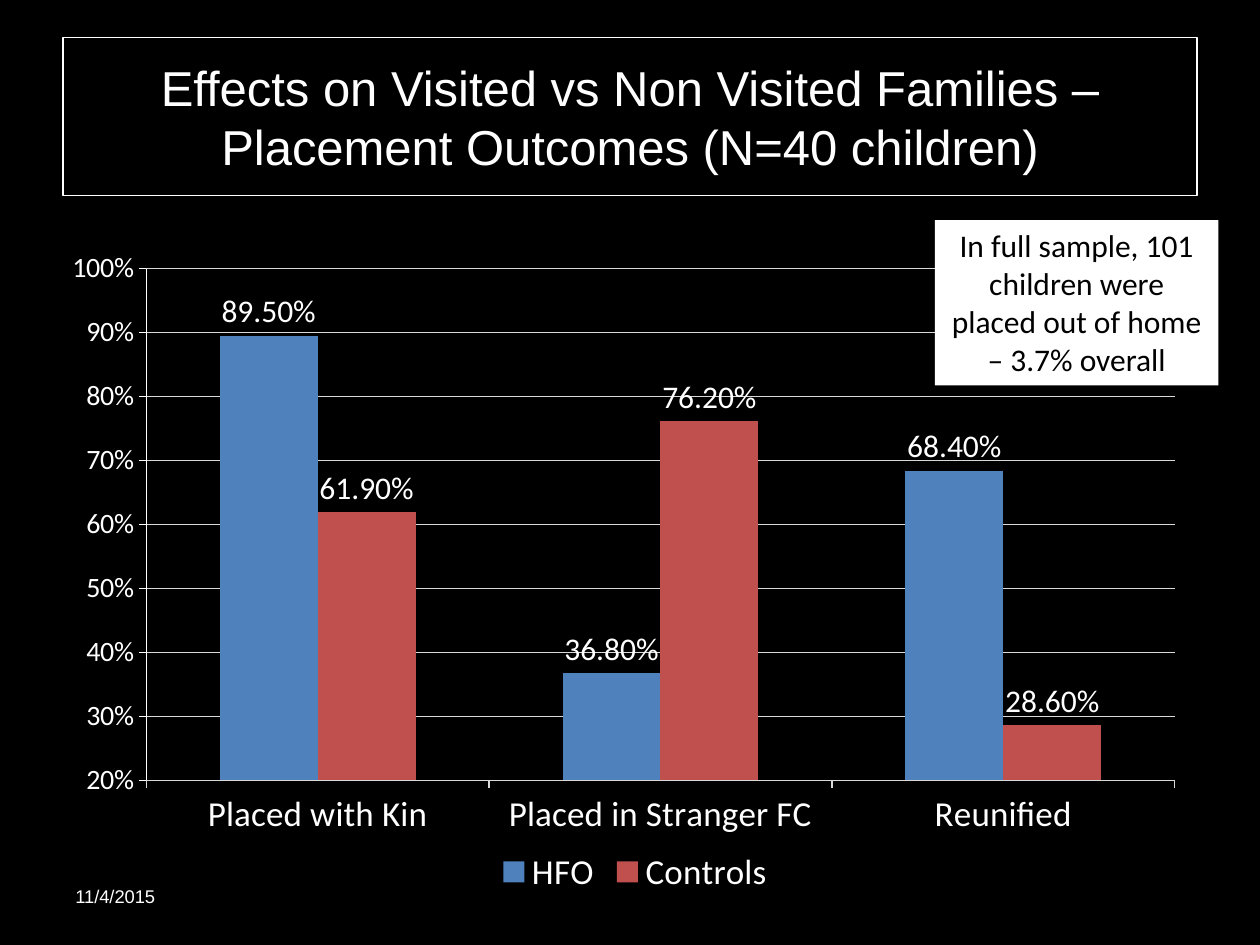
from lxml import etree
from pptx import Presentation
from pptx.chart.data import CategoryChartData
from pptx.dml.color import RGBColor
from pptx.enum.chart import XL_CHART_TYPE, XL_LABEL_POSITION, XL_LEGEND_POSITION, XL_TICK_MARK
from pptx.enum.shapes import MSO_SHAPE
from pptx.enum.text import MSO_ANCHOR, PP_ALIGN
from pptx.oxml.ns import qn
from pptx.util import Inches, Pt

COLUMN = XL_CHART_TYPE.COLUMN_CLUSTERED
BOTTOM = XL_LEGEND_POSITION.BOTTOM
OUTSIDE_END = XL_LABEL_POSITION.OUTSIDE_END
TICK_OUT, TICK_NONE = XL_TICK_MARK.OUTSIDE, XL_TICK_MARK.NONE
RECT = MSO_SHAPE.RECTANGLE
TOP, MIDDLE = MSO_ANCHOR.TOP, MSO_ANCHOR.MIDDLE
LEFT, CENTER = PP_ALIGN.LEFT, PP_ALIGN.CENTER

COLORS = {"back": "000000", "light": "FFFFFF", "grid": "D9D9D9",
          "HFO": "4F81BD", "Controls": "C0504D"}
CATEGORIES = ["Placed with Kin", "Placed in Stranger FC", "Reunified"]
OUTCOMES = {"HFO": (0.895, 0.368, 0.684), "Controls": (0.619, 0.762, 0.286)}
PLOT = {"x": 0.069, "y": 0.084, "w": 0.907, "h": 0.742}
WIDTH, HEIGHT = 10, 7.5


def rgb(name):
    return RGBColor.from_string(COLORS[name])


def place(x, y, w, h):
    return [Inches(v) for v in (x * WIDTH, y * HEIGHT, w * WIDTH, h * HEIGHT)]


def style(font, size, color="light", name="Calibri"):
    font.size, font.name, font.bold = Pt(size), name, False
    font.color.rgb = rgb(color)


def rule(line, color):
    line.color.rgb, line.width = rgb(color), Pt(0.75)


def write(s, text, size, color, name, align=CENTER, anchor=MIDDLE):
    tf = s.text_frame
    tf.word_wrap, tf.vertical_anchor = True, anchor
    p = tf.paragraphs[0]
    p.text, p.alignment = text, align
    style(p.font, size, color, name)


def add_title(slide, box):
    s = slide.shapes.add_shape(RECT, *place(*box))
    s.shadow.inherit = False
    s.fill.background()
    rule(s.line, "light")
    write(s, "Effects on Visited vs Non Visited Families – "
             "Placement Outcomes (N=40 children)", 28, "light", "Arial")


def add_date(slide, box):
    s = slide.shapes.add_textbox(*place(*box))
    write(s, "11/4/2015", 10.5, "light", "Arial", LEFT, TOP)


def add_note(slide, box):
    s = slide.shapes.add_shape(RECT, *place(*box))
    s.shadow.inherit = False
    s.fill.solid()
    s.fill.fore_color.rgb = rgb("light")
    s.line.fill.background()
    write(s, "In full sample, 101 children were placed out of home – 3.7% overall",
          18, "back", "Calibri", anchor=TOP)


def fix_plot(chart):
    area = chart.plots[0]._element.getparent()
    for old in area.findall(qn("c:layout")):
        area.remove(old)
    layout = etree.Element(qn("c:layout"))
    area.insert(0, layout)
    manual = etree.SubElement(layout, qn("c:manualLayout"))
    settings = {"layoutTarget": "inner", "xMode": "edge", "yMode": "edge", **PLOT}
    for tag, value in settings.items():
        etree.SubElement(manual, qn(f"c:{tag}")).set("val", str(value))


def style_axis(axis, size, color):
    style(axis.tick_labels.font, size)
    axis.major_tick_mark, axis.minor_tick_mark = TICK_OUT, TICK_NONE
    rule(axis.format.line, color)


def add_outcomes(slide, box):
    data = CategoryChartData(number_format="0.00%")
    data.categories = CATEGORIES
    for name, values in OUTCOMES.items():
        data.add_series(name, values)
    chart = slide.shapes.add_chart(COLUMN, *place(*box), data).chart
    chart.has_title = False
    style(chart.font, 10)
    fix_plot(chart)

    plot = chart.plots[0]
    plot.gap_width, plot.overlap, plot.vary_by_categories = 150, 0, False
    for series in plot.series:
        series.format.fill.solid()
        series.format.fill.fore_color.rgb = rgb(series.name)
        labels = series.data_labels
        labels.show_value, labels.position = True, OUTSIDE_END
        labels.number_format, labels.number_format_is_linked = "0.00%", False
        style(labels.font, 18)

    style_axis(chart.category_axis, 20, "grid")
    axis = chart.value_axis
    style_axis(axis, 16, "light")
    axis.minimum_scale, axis.maximum_scale, axis.major_unit = 0.2, 1, 0.1
    axis.tick_labels.number_format = "0%"
    axis.tick_labels.number_format_is_linked = False
    rule(axis.major_gridlines.format.line, "grid")

    chart.has_legend = True
    chart.legend.position, chart.legend.include_in_layout = BOTTOM, False
    style(chart.legend.font, 20)


def main():
    prs = Presentation()
    prs.slide_width, prs.slide_height = Inches(WIDTH), Inches(HEIGHT)
    slide = prs.slides.add_slide(prs.slide_layouts[6])
    slide.background.fill.solid()
    slide.background.fill.fore_color.rgb = rgb("back")
    add_title(slide, (0.05, 0.04, 0.9, 1 / 6))
    add_date(slide, (0.05, 0.93, 0.23, 0.05))
    add_outcomes(slide, (0.054, 0.223, 0.9, 0.73))
    add_note(slide, (0.742, 0.233, 0.225, 0.175))
    prs.save("out.pptx")


if __name__ == "__main__":
    main()
